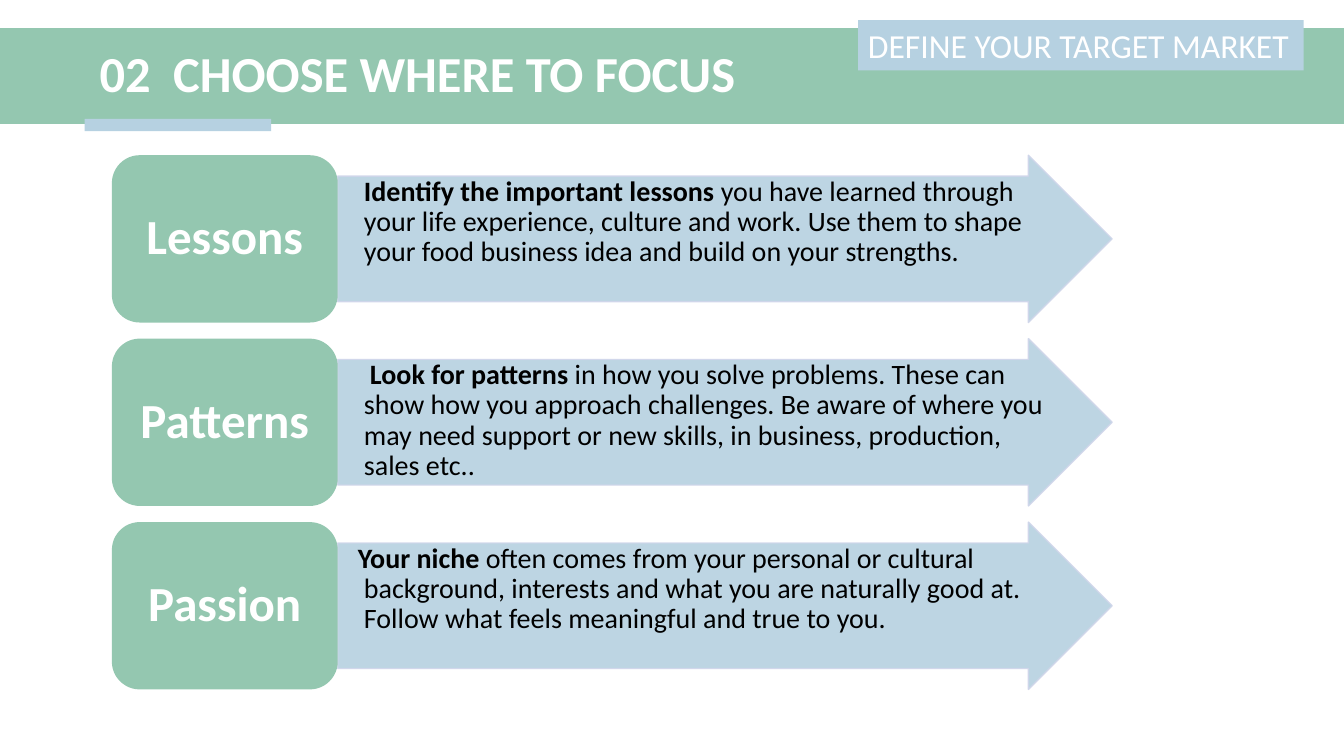
from lxml.etree import SubElement
from pptx import Presentation
from pptx.dml.color import RGBColor
from pptx.enum.shapes import MSO_SHAPE as Shape
from pptx.enum.text import MSO_ANCHOR as Anchor, PP_ALIGN as Align
from pptx.oxml.ns import qn
from pptx.util import Inches, Pt

GREEN = RGBColor(0x94, 0xC7, 0xB0)
BLUE = RGBColor(0xB6, 0xD1, 0xE1)
EDGE = RGBColor(0xCF, 0xD5, 0xEA)
WHITE = RGBColor(0xFF, 0xFF, 0xFF)
BLACK = RGBColor(0, 0, 0)

TITLE = "02\tCHOOSE WHERE TO FOCUS"
SECTION = "DEFINE YOUR TARGET MARKET"
# label, bold opening, rest of the text, first-line indent in inches
STEPS = [
    ("Lessons", "Identify the important lessons ",
     "you have learned through your life experience, culture and work. "
     "Use them to shape your food business idea and build on your strengths.", 0),
    ("Patterns", "Look for patterns ",
     "in how you solve problems. These can show how you approach challenges. "
     "Be aware of where you may need support or new skills, in business, "
     "production, sales etc..", 0.06),
    ("Passion", "Your niche ",
     "often comes from your personal or cultural background, interests and what "
     "you are naturally good at. Follow what feels meaningful and true to you.", -0.06),
]

WIDTH, HEIGHT = 13.33, 7.5
ROW_TOP, ROW_HEIGHT, ROW_PITCH = 1.54, 1.66, 1.82
LABEL_LEFT, LABEL_WIDTH = 1.11, 2.24
ARROW_LEFT, ARROW_WIDTH = LABEL_LEFT + LABEL_WIDTH, 7.68
SHAFT = 0.75
TEXT_WIDTH = 7.06
TEXT_INDENT = 0.25

prs = Presentation()
prs.slide_width, prs.slide_height = Inches(WIDTH), Inches(HEIGHT)
slide = prs.slides.add_slide(prs.slide_layouts[6])


def add_block(kind, box, color):
    block = slide.shapes.add_shape(kind, *map(Inches, box))
    block.shadow.inherit = False
    block.fill.solid()
    block.fill.fore_color.rgb = color
    block.line.fill.background()
    return block


def set_frame(shape, inset=(0.1, 0.05), anchor=Anchor.TOP, wrap=True):
    """Set up the text frame and return its first paragraph."""
    frame = shape.text_frame
    frame.word_wrap = wrap
    frame.vertical_anchor = anchor
    frame.margin_left = frame.margin_right = Inches(inset[0])
    frame.margin_top = frame.margin_bottom = Inches(inset[1])
    return frame.paragraphs[0]


def add_run(paragraph, text, size, color, bold=False):
    run = paragraph.add_run()
    run.text = text
    font = run.font
    font.name, font.size, font.bold = "Calibri", Pt(size), bold
    font.color.rgb = color


def set_opacity(fill_owner, percent):
    for color in fill_owner.iter(qn("a:srgbClr")):
        SubElement(color, qn("a:alpha"), val=str(percent * 1000))


def add_header():
    add_block(Shape.RECTANGLE, (0, 0.28, WIDTH, 0.95), GREEN)
    add_block(Shape.RECTANGLE, (0.84, 1.18, 1.85, 0.12), BLUE)

    title = slide.shapes.add_textbox(*map(Inches, (0.89, 0.36, 11.93, 0.79)))
    heading = set_frame(title, anchor=Anchor.MIDDLE)
    heading.line_spacing = 0.9
    stops = SubElement(heading._p.get_or_add_pPr(), qn("a:tabLst"))
    SubElement(stops, qn("a:tab"), pos=str(Inches(0.73)), algn="l")
    add_run(heading, TITLE, 36, WHITE, True)

    section = add_block(Shape.RECTANGLE, (8.51, 0.2, 4.42, 0.5), BLUE)
    caption = set_frame(section, wrap=False)
    caption.alignment = Align.LEFT
    add_run(caption, SECTION, 24, WHITE)


def add_step(top, label, opening, rest, first_indent):
    arrow = add_block(Shape.RIGHT_ARROW, (ARROW_LEFT, top, ARROW_WIDTH, ROW_HEIGHT), BLUE)
    arrow.adjustments[0], arrow.adjustments[1] = SHAFT, 0.5
    arrow.line.color.rgb, arrow.line.width = EDGE, Pt(1)
    set_opacity(arrow._element.spPr, 90)

    text_top = top + ROW_HEIGHT * (1 - SHAFT) / 2
    advice = slide.shapes.add_textbox(
        *map(Inches, (ARROW_LEFT, text_top, TEXT_WIDTH, ROW_HEIGHT * SHAFT)))
    paragraph = set_frame(advice, (0.01, 0.01))
    paragraph.line_spacing = 0.9
    props = paragraph._p.get_or_add_pPr()
    props.set("marL", str(Inches(TEXT_INDENT)))
    props.set("indent", str(Inches(first_indent)))
    add_run(paragraph, opening, 20, BLACK, True)
    add_run(paragraph, rest, 20, BLACK)

    badge = add_block(Shape.ROUNDED_RECTANGLE, (LABEL_LEFT, top, LABEL_WIDTH, ROW_HEIGHT), GREEN)
    name = set_frame(badge, (0.15, 0.07), Anchor.MIDDLE)
    name.alignment = Align.CENTER
    name.line_spacing = 0.9
    add_run(name, label, 35, WHITE, True)


add_header()
for row, step in enumerate(STEPS):
    add_step(ROW_TOP + row * ROW_PITCH, *step)

prs.save("out.pptx")
